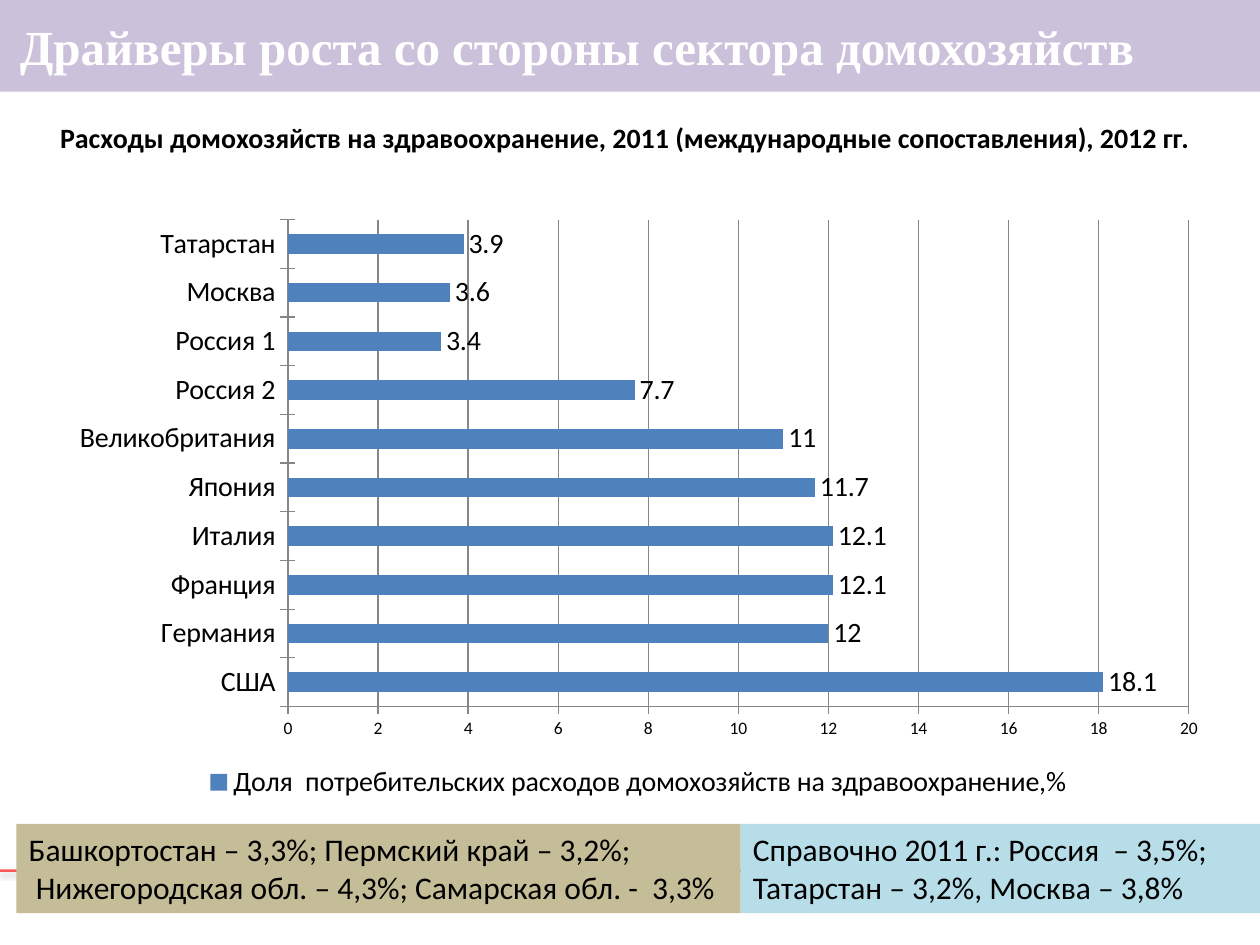
from lxml.etree import SubElement as Sub
from pptx import Presentation
from pptx.chart.data import CategoryChartData as Data
from pptx.dml.color import RGBColor as Rgb
from pptx.enum.chart import XL_CHART_TYPE as Kind, XL_LABEL_POSITION as Spot
from pptx.enum.chart import XL_LEGEND_POSITION as Side, XL_TICK_MARK as Tick
from pptx.enum.shapes import MSO_CONNECTOR as Link
from pptx.enum.text import MSO_ANCHOR as Anchor, PP_ALIGN as Align
from pptx.oxml.ns import qn
from pptx.util import Cm, Pt

HUES = {
    "black": "000000", "white": "FFFFFF", "red": "FF0000", "lilac": "CCC1DA",
    "sand": "C4BD97", "sky": "B7DEE8", "blue": "4F81BD", "grey": "868686",
}
SHARES = {
    "США": 18.1, "Германия": 12, "Франция": 12.1, "Италия": 12.1,
    "Япония": 11.7, "Великобритания": 11, "Россия 2": 7.7,
    "Россия 1": 3.4, "Москва": 3.6, "Татарстан": 3.9,
}


class Deck:
    """Holds the style and the current slide."""

    def __init__(self, wide, high):
        self.prs = Presentation()
        self.prs.slide_width, self.prs.slide_height = Cm(wide), Cm(high)
        self.slide = self.prs.slides.add_slide(self.prs.slide_layouts[6])
        self.shapes = self.slide.shapes

    def hue(self, name):
        return Rgb.from_string(HUES[name])

    def style(self, font, size, hue="black", face="Calibri", bold=False):
        font.name, font.size, font.bold = face, Pt(size), bold
        font.color.rgb = self.hue(hue)

    def rule(self, left, right, top):
        line = self.shapes.add_connector(
            Link.STRAIGHT, Cm(left), Cm(top), Cm(right), Cm(top))
        line.line.width = Pt(1.5)
        line.line.color.rgb = self.hue("red")
        props = line._element.spPr
        tint = next(props.iter(qn("a:srgbClr")))
        Sub(tint, qn("a:alpha"), val="64000")
        glow = Sub(Sub(props, qn("a:effectLst")), qn("a:outerShdw"),
                   blurRad=str(Pt(3.1)), dist=str(Pt(1.6)), dir="5400000")
        shade = Sub(glow, qn("a:srgbClr"), val=HUES["black"])
        Sub(shade, qn("a:alpha"), val="38000")

    def text(self, box, lines, size, fill=None, align=Align.LEFT,
             inset=0.25, anchor=Anchor.TOP, **font):
        shape = self.shapes.add_textbox(*map(Cm, box))
        if fill:
            shape.fill.solid()
            shape.fill.fore_color.rgb = self.hue(fill)
        frame = shape.text_frame
        frame.word_wrap = True
        frame.margin_left = Cm(inset)
        frame.vertical_anchor = anchor
        frame.text = "\n".join(lines)
        for par in frame.paragraphs:
            par.alignment = align
            self.style(par.font, size, **font)

    def bars(self, box, name, shares):
        data = Data()
        data.categories = list(shares)
        data.add_series(name, list(shares.values()))
        chart = self.shapes.add_chart(
            Kind.BAR_CLUSTERED, *map(Cm, box), data).chart
        self.style(chart.font, 10)
        chart.has_title = False
        chart.has_legend = True
        chart.legend.position = Side.BOTTOM
        chart.legend.include_in_layout = False
        self.style(chart.legend.font, 16)
        cats, vals = chart.category_axis, chart.value_axis
        self.style(cats.tick_labels.font, 16)
        vals.has_major_gridlines = True
        vals.minimum_scale, vals.maximum_scale, vals.major_unit = 0, 20, 2
        for axis in (cats, vals):
            axis.major_tick_mark = Tick.CROSS
        for part in (cats, vals, vals.major_gridlines):
            part.format.line.color.rgb = self.hue("grey")
            part.format.line.width = Pt(0.75)
        plot = chart.plots[0]
        plot.gap_width = 150
        plot.vary_by_categories = False
        fill = plot.series[0].format.fill
        fill.solid()
        fill.fore_color.rgb = self.hue("blue")
        labels = plot.series[0].data_labels
        labels.show_value = True
        labels.position = Spot.OUTSIDE_END
        self.style(labels.font, 16)

    def save(self):
        self.prs.save("out.pptx")


def main():
    deck = Deck(25.4, 19.05)
    deck.rule(0, 25.4, 17.55)
    deck.text((0, 0, 25.4, 1.85),
              ["Драйверы роста со стороны сектора домохозяйств"], 28, "lilac",
              Align.JUSTIFY, 0.4, Anchor.MIDDLE,
              hue="white", face="Times New Roman", bold=True)
    deck.text((0.6, 2.3, 24, 0.94),
              ["Расходы домохозяйств на здравоохранение, 2011 "
               "(международные сопоставления), 2012 гг."],
              16, align=Align.CENTER, bold=True)
    deck.text((0.33, 16.61, 14.6, 1.8),
              ["Башкортостан – 3,3%; Пермский край – 3,2%;",
               " Нижегородская обл. – 4,3%; Самарская обл. -  3,3%"],
              18, "sand")
    deck.text((14.93, 16.61, 10.47, 1.8),
              ["Справочно 2011 г.: Россия  – 3,5%;",
               "Татарстан – 3,2%, Москва – 3,8%"], 18, "sky")
    deck.bars((1.14, 4.19, 23.47, 12.04),
              "Доля  потребительских расходов домохозяйств "
              "на здравоохранение,%", SHARES)
    deck.save()


if __name__ == "__main__":
    main()
